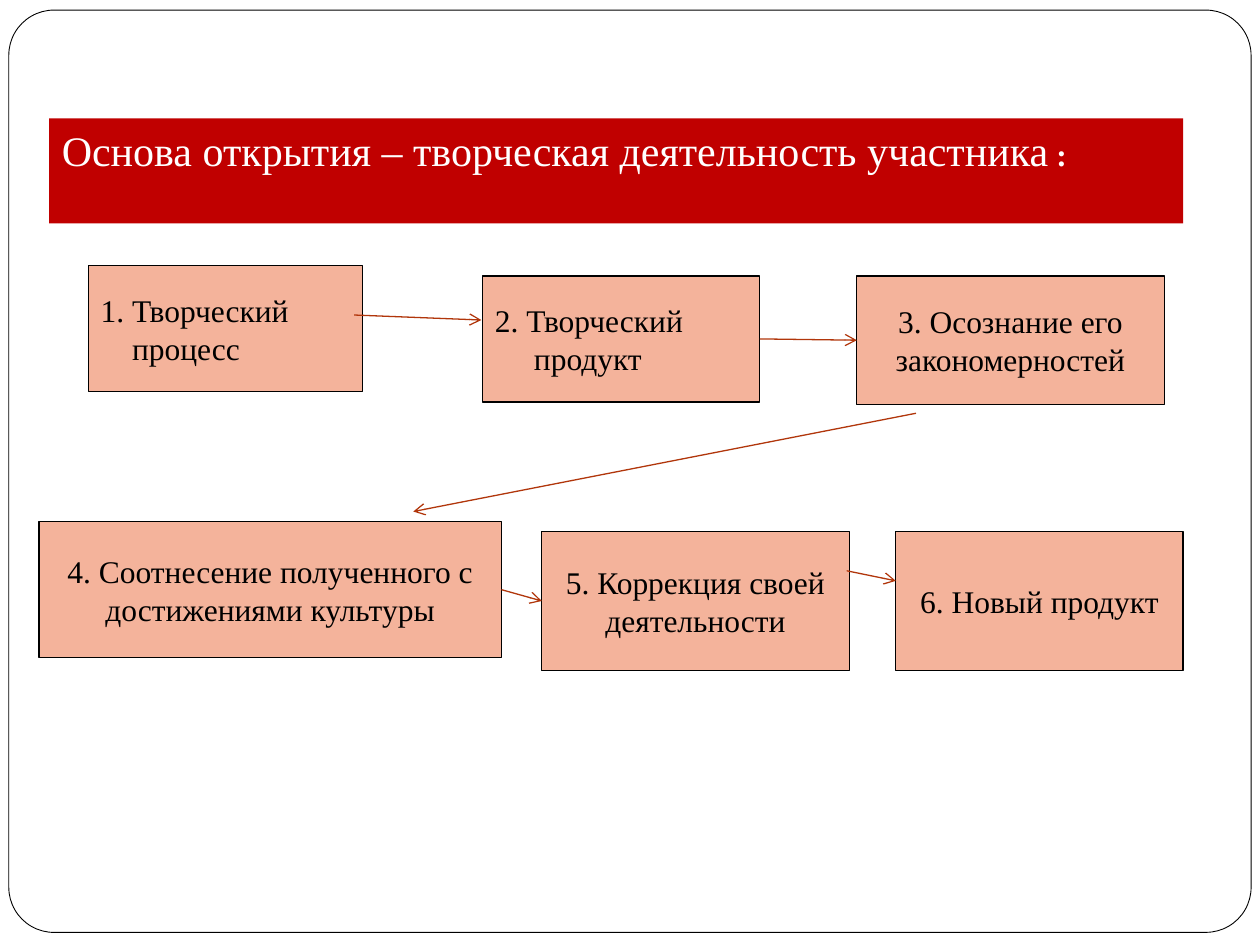
from dataclasses import dataclass

import lxml.etree
import pptx
import pptx.dml.color
import pptx.enum.shapes
import pptx.enum.text
import pptx.oxml.ns
import pptx.util

Inches = pptx.util.Inches
Align = pptx.enum.text.PP_ALIGN
Anchor = pptx.enum.text.MSO_ANCHOR
Preset = pptx.enum.shapes.MSO_SHAPE


@dataclass(frozen=True)
class Theme:
    font: str = "Times New Roman"
    paper: str = "FFFFFF"
    ink: str = "000000"
    banner: str = "C00000"
    step: str = "F4B39B"
    arrow: str = "B1360B"
    title_size: int = 24
    text_size: int = 18
    frame_width: float = 0.5
    line_width: float = 0.75


def rgb(value):
    return pptx.dml.color.RGBColor.from_string(value)


def write(para, text, *, font, size, color, bold=False):
    span = para.add_run()
    span.text = text
    span.font.name = font
    span.font.size = pptx.util.Pt(size)
    span.font.color.rgb = rgb(color)
    span.font.bold = bold


def paint(shape, fill):
    shape.fill.solid()
    shape.fill.fore_color.rgb = rgb(fill)


def outline(shape, color, width):
    shape.line.color.rgb = rgb(color)
    shape.line.width = pptx.util.Pt(width)


class SlideBuilder:
    def __init__(self, slide, theme):
        self.slide = slide
        self.theme = theme

    def box(self, preset, place, fill, line_width):
        box = self.slide.shapes.add_shape(preset, *map(Inches, place))
        box.shadow.inherit = False
        paint(box, fill)
        outline(box, self.theme.ink, line_width)
        return box

    def frame(self, place, corner):
        """Draw the rounded page border behind the title."""
        frame = self.box(Preset.ROUNDED_RECTANGLE, place,
                         self.theme.paper, self.theme.frame_width)
        frame.adjustments[0] = corner
        self.slide.shapes.title.element.addprevious(frame.element)

    def title(self, place, spans):
        title = self.slide.shapes.title
        title.left, title.top, title.width, title.height = map(Inches, place)
        paint(title, self.theme.banner)
        text_frame = title.text_frame
        text_frame.vertical_anchor = Anchor.TOP
        text_frame.auto_size = pptx.enum.text.MSO_AUTO_SIZE.SHAPE_TO_FIT_TEXT
        para = text_frame.paragraphs[0]
        para.alignment = Align.LEFT
        for text, size, bold in spans:
            write(para, text, font=self.theme.font, size=size,
                  color=self.theme.paper, bold=bold)

    def step(self, place, lines, indent=None):
        """Draw a step; an indent aligns it left and sets in its later lines."""
        box = self.box(Preset.RECTANGLE, place, self.theme.step, self.theme.line_width)
        text_frame = box.text_frame
        text_frame.word_wrap = True
        text_frame.vertical_anchor = Anchor.MIDDLE
        for index, line in enumerate(lines):
            para = text_frame.add_paragraph() if index else text_frame.paragraphs[0]
            para.alignment = Align.LEFT if indent else Align.CENTER
            if indent and index:
                para._p.get_or_add_pPr().set("marL", str(Inches(indent)))
            write(para, line, font=self.theme.font, size=self.theme.text_size,
                  color=self.theme.ink)

    def arrow(self, start, end):
        arrow = self.slide.shapes.add_connector(
            pptx.enum.shapes.MSO_CONNECTOR.STRAIGHT, *map(Inches, start + end))
        outline(arrow, self.theme.arrow, self.theme.line_width)
        qn = pptx.oxml.ns.qn
        lxml.etree.SubElement(arrow.line._get_or_add_ln(), qn("a:tailEnd"), type="arrow")
        lxml.etree.SubElement(arrow.element.spPr, qn("a:effectLst"))


def main():
    theme = Theme()
    deck = pptx.Presentation()
    deck.slide_width, deck.slide_height = Inches(10), Inches(7.5)
    title_only = deck.slide_layouts.get_by_name("Title Only")
    page = SlideBuilder(deck.slides.add_slide(title_only), theme)

    page.frame((0.07, 0.08, 9.86, 7.32), corner=0.049)
    page.title((0.39, 0.94, 9, 0.5), [
        ("Основа открытия – творческая деятельность участника", theme.title_size, False),
        (" ", theme.text_size, False),
        (":", theme.text_size, True),
    ])

    steps = [
        ((0.7, 2.11, 2.18, 1), ["1. Творческий", "процесс"], 0.25),
        ((3.83, 2.19, 2.2, 1), ["2. Творческий", "продукт"], 0.31),
        ((6.8, 2.19, 2.44, 1.02), ["3. Осознание его", "закономерностей"], None),
        ((0.31, 4.14, 3.67, 1.08),
         ["4. Соотнесение полученного с", "достижениями культуры"], None),
        ((4.3, 4.22, 2.44, 1.1), ["5. Коррекция своей", "деятельности"], None),
        ((7.11, 4.22, 2.28, 1.1), ["6. Новый продукт"], None),
    ]
    for place, lines, indent in steps:
        page.step(place, lines, indent)

    arrows = [
        ((2.81, 2.5), (3.82, 2.54)),
        ((6.03, 2.69), (6.8, 2.7)),
        ((3.98, 4.68), (4.3, 4.77)),
        ((6.72, 4.53), (7.11, 4.61)),
        ((7.27, 3.28), (3.28, 4.06)),
    ]
    for start, end in arrows:
        page.arrow(start, end)

    deck.save("out.pptx")


if __name__ == "__main__":
    main()
